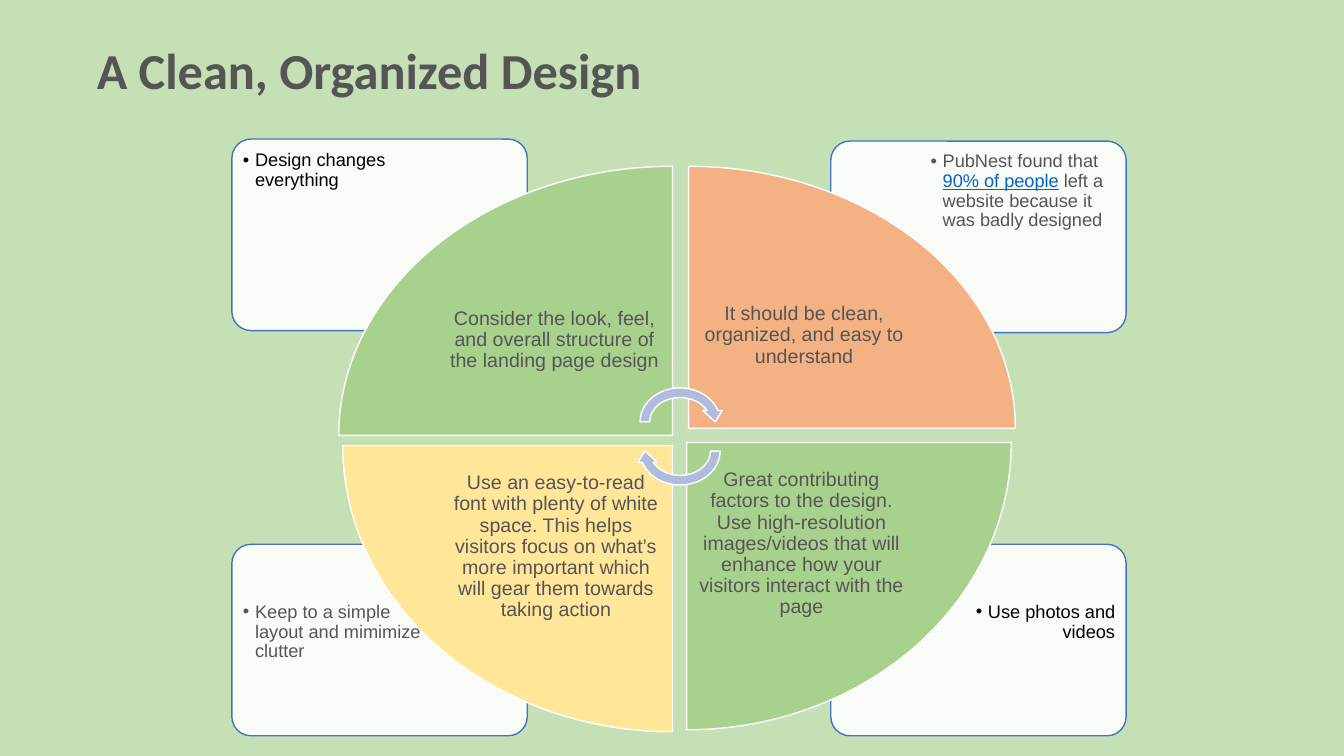
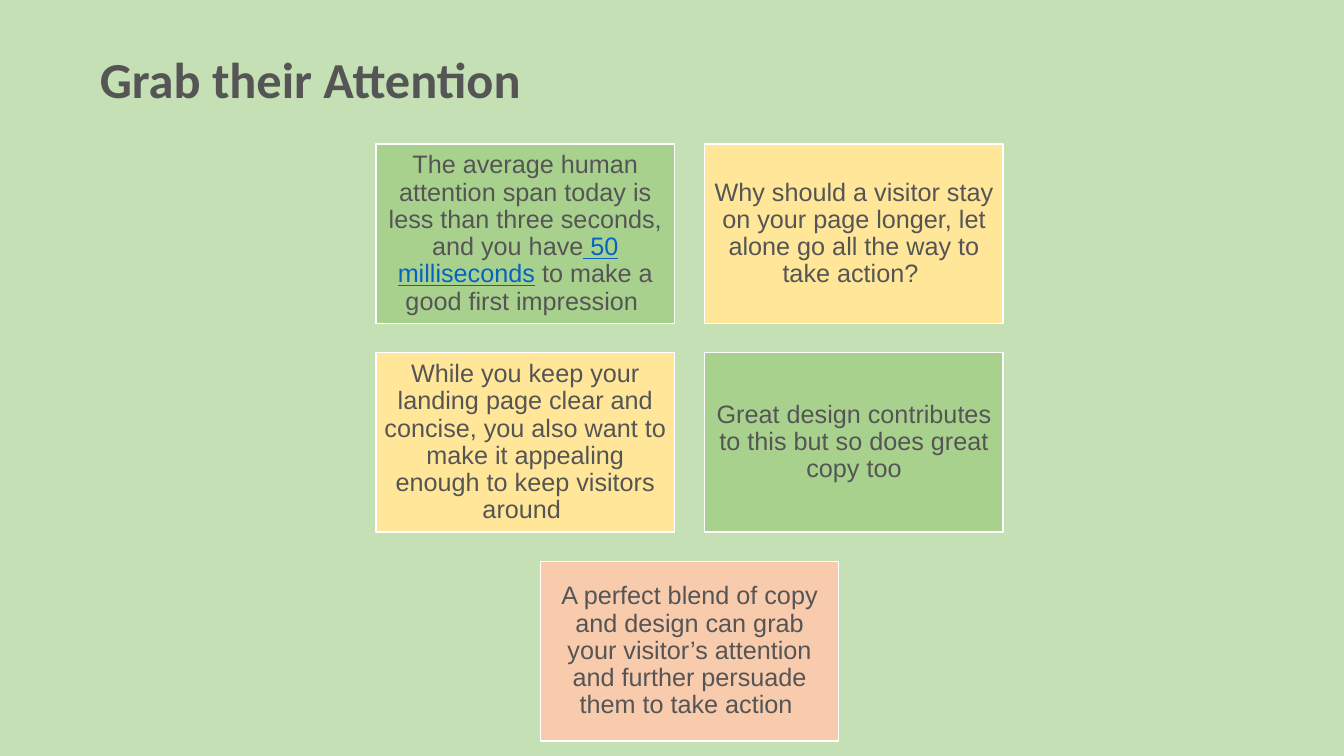
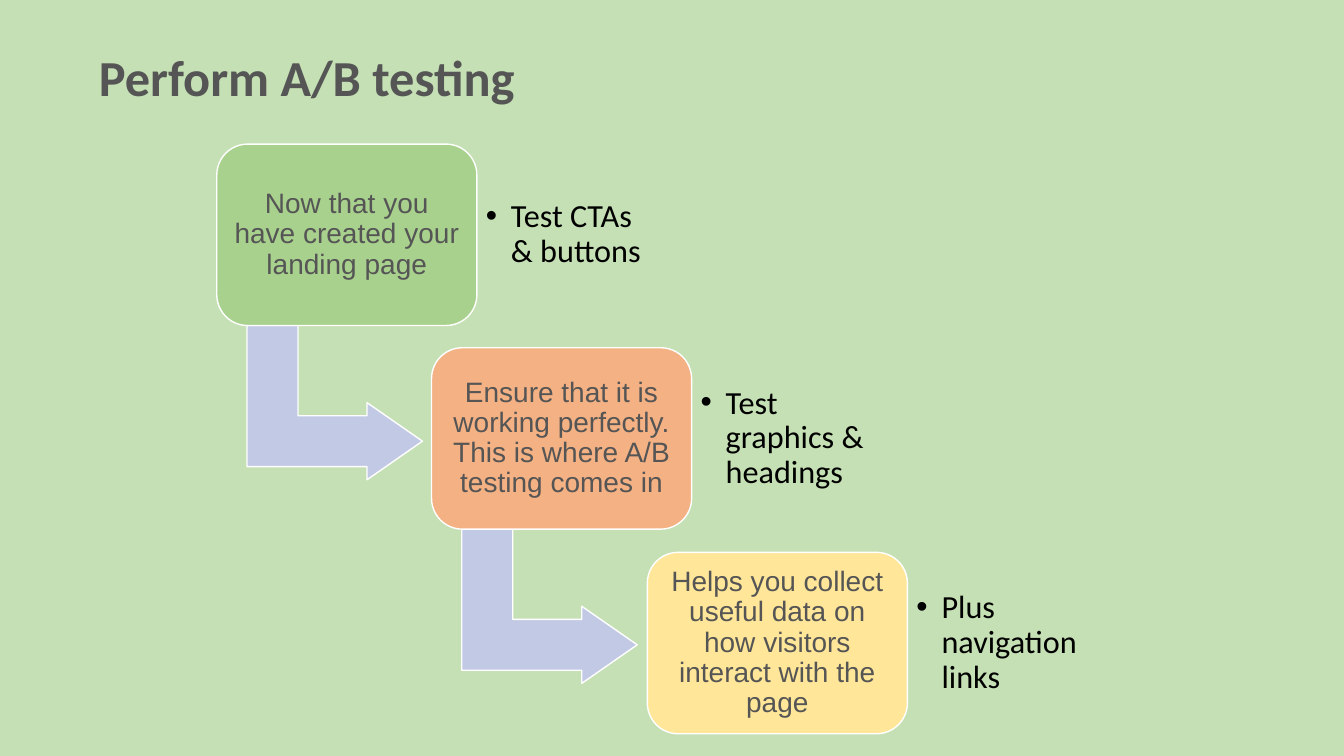
from lxml.etree import SubElement
from pptx import Presentation
from pptx.dml.color import RGBColor
from pptx.enum.shapes import MSO_SHAPE
from pptx.enum.text import MSO_ANCHOR, MSO_AUTO_SIZE, PP_ALIGN
from pptx.oxml.ns import qn
from pptx.util import Pt

PX = 9144  # EMU in one px, 100 px to the inch
WIDE, HIGH = 1333, 750

MINT = RGBColor(0xC5, 0xE0, 0xB4)
GREEN = RGBColor(0xA9, 0xD1, 0x8E)
ORANGE = RGBColor(0xF4, 0xB1, 0x83)
PEACH = RGBColor(0xF8, 0xCB, 0xAD)
YELLOW = RGBColor(0xFF, 0xE6, 0x99)
LILAC = RGBColor(0xB0, 0xBC, 0xDE)
PALE = RGBColor(0xC1, 0xC9, 0xE4)
BLUE = RGBColor(0x44, 0x72, 0xC4)
LINK = RGBColor(0x05, 0x63, 0xC1)
GRAY = RGBColor(0x55, 0x55, 0x55)
BLACK = RGBColor(0, 0, 0)
WHITE = RGBColor(0xFF, 0xFF, 0xFF)


class Deck:
    def __init__(self):
        self.show = Presentation()
        self.show.slide_width, self.show.slide_height = WIDE * PX, HIGH * PX
        back = self.show.slide_master.background.fill
        back.solid()
        back.fore_color.rgb = MINT
        self.slide = None

    def page(self, title, left, top, width, lead=0.9):
        """Start a slide and return its title paragraph."""
        layout = self.show.slide_layouts[5]
        self.slide = self.show.slides.add_slide(layout)
        head = self.slide.shapes.title
        head.left, head.top = left * PX, top * PX
        head.width, head.height = width * PX, 145 * PX
        return self.text(head, [title], 36, inset=10, font="Calibri",
                         align=PP_ALIGN.LEFT, bold=True, lead=lead)

    def shape(self, kind, box, fill, line=WHITE, turn=0, adjust=(), alpha=None):
        """Draw a shape that fills the box once it has been turned."""
        x, y, w, h = box
        if turn % 180:
            x, y, w, h = x + (w - h) / 2, y + (h - w) / 2, h, w
        item = self.slide.shapes.add_shape(
            kind, *(int(size * PX) for size in (x, y, w, h)))
        item.rotation = turn
        item.shadow.inherit = False
        for at, value in enumerate(adjust):
            item.adjustments[at] = value
        item.fill.solid()
        item.fill.fore_color.rgb = fill
        if alpha:
            tint = item.element.spPr.find(".//" + qn("a:srgbClr"))
            SubElement(tint, qn("a:alpha")).set("val", str(alpha * 1000))
        item.line.color.rgb = line
        item.line.width = Pt(1)
        return item

    def label(self, box, parts, size, **style):
        item = self.slide.shapes.add_textbox(*(n * PX for n in box))
        return self.text(item, parts, size, **style)

    def text(self, item, parts, size, inset=7, font="Arial", color=GRAY,
             align=PP_ALIGN.CENTER, anchor=MSO_ANCHOR.MIDDLE, bold=False,
             lead=0.9, hang=0):
        """Fill in one paragraph; every second part is styled as a link."""
        frame = item.text_frame
        frame.word_wrap = True
        frame.auto_size = MSO_AUTO_SIZE.NONE
        frame.vertical_anchor = anchor
        frame.margin_left = frame.margin_right = inset * PX
        frame.margin_top = frame.margin_bottom = inset * PX
        para = frame.paragraphs[0]
        if hang:
            props = para._p.get_or_add_pPr()
            props.set("marL", str(hang * PX))
            props.set("indent", str(-hang * PX))
            SubElement(props, qn("a:buFont")).set("typeface", "Arial")
            SubElement(props, qn("a:buChar")).set("char", "•")
        para.alignment = align
        para.line_spacing = lead
        para.font.name, para.font.size = font, Pt(size)
        para.font.bold, para.font.color.rgb = bold, color
        for at, part in enumerate(parts):
            run = para.add_run()
            run.text = part
            if at % 2:
                run.font.underline = True
                run.font.color.rgb = LINK
        return para


def design(deck):
    deck.page("A Clean, Organized Design", 86, 0, 692)
    left, right = PP_ALIGN.LEFT, PP_ALIGN.RIGHT
    cards = [
        (824, 540, 916, 591, right, BLACK, ["Use photos and videos"]),
        (230, 540, 234, 591, left, GRAY,
         ["Keep to a simple layout and mimimize clutter"]),
        (824, 140, 916, 144, left, GRAY,
         ["PubNest found that ", "90% of people",
          " left a website because it was badly designed"]),
        (230, 138, 234, 143, left, BLACK, ["Design changes everything"]),
    ]
    for x, y, across, down, align, color, parts in cards:
        deck.shape(MSO_SHAPE.ROUNDED_RECTANGLE, (x, y, 293, 190), WHITE,
                   line=BLUE, adjust=[0.1], alpha=90)
        deck.label((across, down, 197, 134), parts, 13, color=color,
                   align=align, anchor=MSO_ANCHOR.TOP, hang=12)

    wedges = [
        ((336, 165, 331, 267), GREEN, (433, 243, 234, 189),
         "Consider the look, feel, and overall structure of the landing "
         "page design"),
        ((683, 165, 324, 260), ORANGE, (683, 241, 229, 184),
         "It should be clean, organized, and easy to understand"),
        ((681, 439, 322, 285), GREEN, (681, 439, 228, 201),
         "Great contributing factors to the design. Use high-resolution "
         "images/videos that will enhance how your visitors interact with "
         "the page"),
        ((340, 442, 327, 284), YELLOW, (436, 442, 231, 201),
         "Use an easy-to-read font with plenty of white space. This helps "
         "visitors focus on what’s more important which will gear them "
         "towards taking action"),
    ]
    for at, (box, fill, area, text) in enumerate(wedges):
        deck.shape(MSO_SHAPE.PIE_WEDGE, box, fill, turn=90 * at)
        deck.label(area, [text], 14, inset=11)
    for y, turn in ((380, 0), (409, 180)):
        deck.shape(MSO_SHAPE.CIRCULAR_ARROW, (630, y, 89, 77), LILAC, turn=turn)


def grab(deck):
    deck.page("Grab their Attention", 89, 9, 645)
    tiles = [
        (GREEN, ["The average human attention span today is less than three "
                 "seconds, and you have", " 50 milliseconds",
                 " to make a good first impression "]),
        (YELLOW, ["Why should a visitor stay on your page longer, let alone "
                  "go all the way to take action? "]),
        (YELLOW, ["While you keep your landing page clear and concise, you "
                  "also want to make it appealing enough to keep visitors "
                  "around "]),
        (GREEN, ["Great design contributes to this but so does great copy "
                 "too"]),
        (PEACH, ["A perfect blend of copy and design can grab your visitor’s "
                 "attention and further persuade them to take action "]),
    ]
    wide, high, gap = 296, 178, 30
    for at, (fill, parts) in enumerate(tiles):
        row, col = divmod(at, 2)
        if at == len(tiles) - 1:
            col = 0.5
        box = (373 + col * (wide + gap), 143 + row * (high + 29), wide, high)
        deck.text(deck.shape(MSO_SHAPE.RECTANGLE, box, fill), parts, 18)


def test(deck):
    head = deck.page("Perform A/B testing", 88, 1, 645, lead=1.07)
    head.space_before = Pt(2)
    steps = [
        (GREEN, "Now that you have created your landing page",
         "Test CTAs & buttons"),
        (ORANGE, "Ensure that it is working perfectly. This is where A/B "
         "testing comes in", "Test graphics & headings"),
        (YELLOW, "Helps you collect useful data on how visitors interact "
         "with the page", "Plus navigation links"),
    ]
    for at, (fill, text, note) in enumerate(steps):
        x, y = 215 + 427 * at // 2, 143 + 405 * at // 2
        if at < len(steps) - 1:
            deck.shape(MSO_SHAPE.BENT_UP_ARROW, (x + 30, y + 180, 174, 153),
                       PALE, turn=90, adjust=[0.33, 0.25, 0.36])
        card = deck.shape(MSO_SHAPE.ROUNDED_RECTANGLE, (x, y, 258, 180), fill,
                          adjust=[0.17])
        deck.text(card, [text], 20, inset=8)
        deck.label((x + 257, y + 17, 187, 146), [note], 23, inset=10,
                   font="Calibri", color=BLACK, align=PP_ALIGN.LEFT, hang=25)


def main():
    deck = Deck()
    design(deck)
    grab(deck)
    test(deck)
    deck.show.save("out.pptx")


if __name__ == "__main__":
    main()
